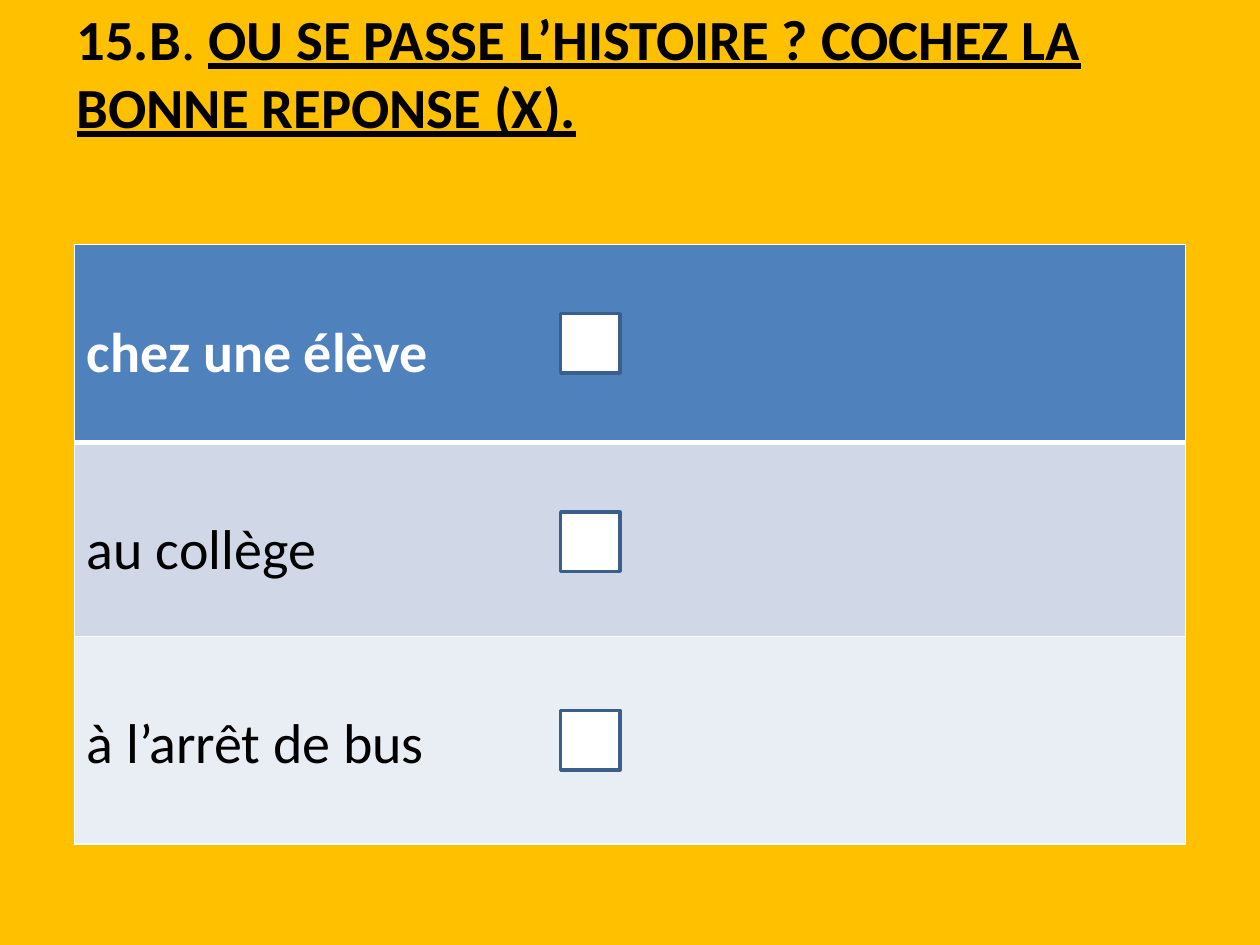
"""Build a quiz slide asking where the story takes place."""
from dataclasses import dataclass

from lxml.etree import SubElement
from pptx import Presentation
from pptx.dml.color import RGBColor as Rgb
from pptx.enum.shapes import MSO_SHAPE as Preset
from pptx.enum.text import MSO_ANCHOR as Anchor
from pptx.oxml.ns import qn
from pptx.util import Emu, Inches, Pt


@dataclass(frozen=True)
class Theme:
    font: str = "Calibri"
    title_size: float = 32.4
    answer_size: float = 32
    background: str = "FFC000"
    ink: str = "000000"
    paper: str = "FFFFFF"
    outline: str = "3A5F8C"
    fills: tuple = ("4F81BD", "D0D8E8", "E9EDF4")


class QuizSlide:
    COLUMNS, ROWS = 100, 75

    def __init__(self, theme):
        self.theme = theme
        self.deck = Presentation()
        self.deck.slide_width, self.deck.slide_height = Inches(10), Inches(7.5)
        self.slide = self.deck.slides.add_slide(self.deck.slide_layouts[6])
        self.paint(self.slide.background.fill, theme.background)

    def paint(self, fill, color):
        fill.solid()
        fill.fore_color.rgb = Rgb.from_string(color)

    def across(self, columns):
        return Emu(round(self.deck.slide_width * columns / self.COLUMNS))

    def down(self, rows):
        return Emu(round(self.deck.slide_height * rows / self.ROWS))

    def place(self, left, top, width, height):
        return self.across(left), self.down(top), self.across(width), self.down(height)

    def style(self, run, size, color, bold=False, underline=False):
        font = run.font
        font.name, font.size = self.theme.font, Pt(size)
        font.bold, font.underline = bold, underline
        font.color.rgb = Rgb.from_string(color)

    def title(self, parts, *area):
        frame = self.slide.shapes.add_textbox(*self.place(*area)).text_frame
        frame.word_wrap = True
        frame.vertical_anchor = Anchor.TOP
        frame.margin_top = frame.margin_bottom = 0
        for words, bold, underline in parts:
            run = frame.paragraphs[0].add_run()
            run.text = words
            self.style(run, self.theme.title_size, self.theme.ink, bold, underline)

    def border(self, cell, side, width):
        properties = cell._tc.get_or_add_tcPr()
        edge = SubElement(properties, qn(f"a:ln{side}"), w=str(Pt(width)))
        solid = SubElement(edge, qn("a:solidFill"))
        SubElement(solid, qn("a:srgbClr"), val=self.theme.paper)

    def answers(self, choices, heights, left, top, width):
        area = self.place(left, top, width, sum(heights))
        table = self.slide.shapes.add_table(len(choices), 1, *area).table
        for index, (choice, height) in enumerate(zip(choices, heights)):
            table.rows[index].height = self.down(height)
            cell, first = table.cell(index, 0), index == 0
            for side in "LRTB":
                heavy = (first and side == "B") or (index == 1 and side == "T")
                self.border(cell, side, 3 if heavy else 1)
            self.paint(cell.fill, self.theme.fills[index])
            cell.margin_top = self.down(5.9)
            cell.text_frame.text = choice
            color = self.theme.paper if first else self.theme.ink
            run = cell.text_frame.paragraphs[0].runs[0]
            self.style(run, self.theme.answer_size, color, bold=first)

    def checkbox(self, left, top, side):
        area = self.place(left, top, side, side)
        box = self.slide.shapes.add_shape(Preset.RECTANGLE, *area)
        box.shadow.inherit = False
        self.paint(box.fill, self.theme.paper)
        self.paint(box.line.fill, self.theme.outline)
        box.line.width = Pt(2)


def main():
    quiz = QuizSlide(Theme())
    question = "OU SE PASSE L’HISTOIRE ? COCHEZ LA BONNE REPONSE (X)."
    quiz.title(
        [("15.B", True, False), (". ", False, False), (question, True, True)],
        5.1, 0.3, 90, 11,
    )
    choices = ("chez une élève", "au collège", "à l’arrêt de bus")
    quiz.answers(choices, (15.7, 15.4, 16.5), 5.9, 19.4, 88.2)
    for index in range(len(choices)):
        quiz.checkbox(44.5, 24.9 + 15.75 * index, 4.7)
    quiz.deck.save("out.pptx")


if __name__ == "__main__":
    main()
